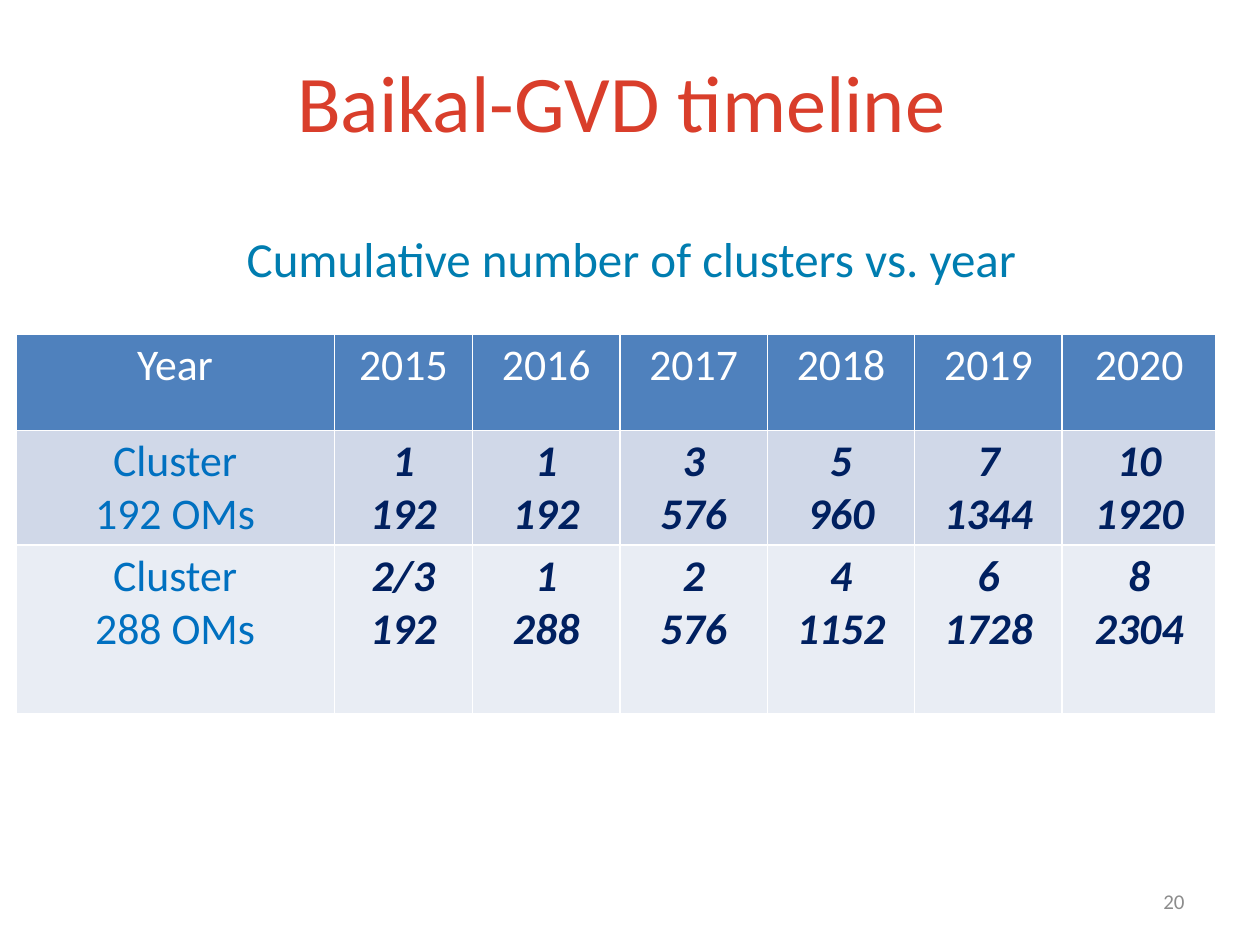
import pptx
import pptx.util
import pptx.dml.color
import pptx.enum.text
import pptx.oxml
import pptx.oxml.ns
from dataclasses import dataclass
from lxml import etree

Pt = pptx.util.Pt
Align = pptx.enum.text.PP_ALIGN
Anchor = pptx.enum.text.MSO_ANCHOR


@dataclass(frozen=True)
class Theme:
    face: str = "Calibri"
    title: str = "D93E2B"
    teal: str = "007DB0"
    white: str = "FFFFFF"
    label: str = "0070C0"
    navy: str = "002060"
    grey: str = "8C8C8C"
    head: str = "4F81BD"
    bands: tuple = ("D0D8E8", "E9EDF4")
    big: float = 45.9
    mid: float = 28
    cell: float = 25
    small: float = 12


THEME = Theme()
WIDTHS = [182, 79] + [84.25] * 4 + [88]
HEIGHTS = [55, 65.5, 96.5]
YEARS = ["Year"] + [str(year) for year in range(2015, 2021)]
ROWS = [
    ["Cluster\n192 OMs", "1\n192", "1\n192", "3\n576", "5\n960", "7\n1344", "10\n1920"],
    ["Cluster\n288 OMs", "2/3\n192", "1\n288", "2\n576", "4\n1152", "6\n1728", "8\n2304"],
]


def color(code):
    return pptx.dml.color.RGBColor.from_string(code)


def write(frame, text, size, tint, align, strong=False):
    frame.text = text
    for para in frame.paragraphs:
        para.alignment = align
        font = para.font
        font.name, font.size = THEME.face, Pt(size)
        font.bold = font.italic = strong
        font.color.rgb = color(tint)


def add_text(slide, box, text, size, tint, align, anchor=Anchor.TOP, inset=7.2):
    frame = slide.shapes.add_textbox(*map(Pt, box)).text_frame
    frame.word_wrap = True
    frame.vertical_anchor = anchor
    frame.margin_left = Pt(inset)
    write(frame, text, size, tint, align)


def set_edges(cell, tint, width):
    props = cell._tc.get_or_add_tcPr()
    for spot, side in enumerate(("lnL", "lnR", "lnT", "lnB")):
        line = etree.Element(pptx.oxml.ns.qn("a:" + side), w=str(Pt(width)))
        fill = etree.SubElement(line, pptx.oxml.ns.qn("a:solidFill"))
        etree.SubElement(fill, pptx.oxml.ns.qn("a:srgbClr"), val=tint)
        props.insert(spot, line)


def add_grid(slide, box):
    rows = [YEARS] + ROWS
    table = slide.shapes.add_table(len(rows), len(YEARS), *map(Pt, box)).table
    for col, width in zip(table.columns, WIDTHS):
        col.width = Pt(width)
    for row, height in zip(table.rows, HEIGHTS):
        row.height = Pt(height)
    for r, texts in enumerate(rows):
        for c, text in enumerate(texts):
            cell = table.cell(r, c)
            cell.margin_left = cell.margin_right = Pt(5)
            cell.margin_top = cell.margin_bottom = Pt(2.5)
            cell.fill.solid()
            cell.fill.fore_color.rgb = color(THEME.bands[r - 1] if r else THEME.head)
            tint = THEME.white if r == 0 else THEME.navy if c else THEME.label
            write(cell.text_frame, text, THEME.cell, tint, Align.CENTER, r > 0 and c > 0)
            set_edges(cell, THEME.white, 1)


def main():
    deck = pptx.Presentation()
    deck.slide_width, deck.slide_height = Pt(720), Pt(540)
    slide = deck.slides.add_slide(deck.slide_layouts[6])

    # Title
    add_text(slide, (31, 26, 648, 90), "Baikal-GVD timeline",
             THEME.big, THEME.title, Align.CENTER)
    # Table of clusters and modules by year
    add_grid(slide, (9, 191, sum(WIDTHS), sum(HEIGHTS)))
    # Table heading
    add_text(slide, (127.5, 127, 466, 41), "Cumulative number of clusters vs. year",
             THEME.mid, THEME.teal, Align.LEFT, inset=13.5)
    # Page number
    add_text(slide, (516, 500.5, 168, 29), "20",
             THEME.small, THEME.grey, Align.RIGHT, Anchor.MIDDLE)

    deck.save("out.pptx")


if __name__ == "__main__":
    main()
